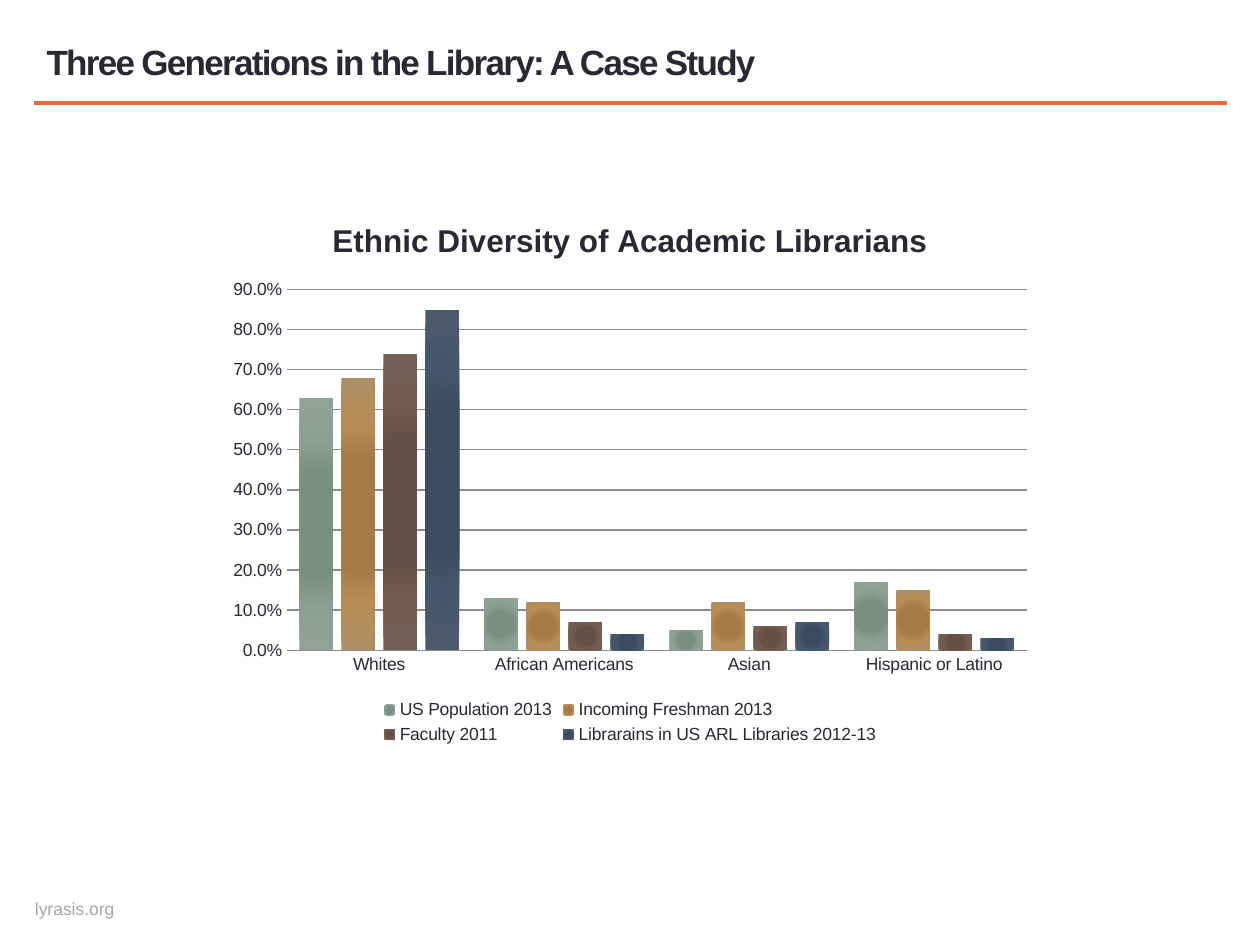
from lxml import etree
from pptx import Presentation
from pptx.chart.data import CategoryChartData
from pptx.dml.color import RGBColor
from pptx.enum.chart import XL_CHART_TYPE, XL_LEGEND_POSITION, XL_TICK_MARK
from pptx.enum.shapes import MSO_CONNECTOR
from pptx.enum.text import MSO_ANCHOR, PP_ALIGN
from pptx.oxml import parse_xml
from pptx.oxml.ns import nsdecls, qn
from pptx.util import Cm, Pt

FONT = "Arial"
INK = "292934"
ORANGE = "E16D2E"
FOOTER_GREY = "A6A6A6"
GRID_GREY = "8C8C8C"

CATEGORIES = ["Whites", "African Americans", "Asian", "Hispanic or Latino"]
SERIES = [
    ("US Population 2013", (0.63, 0.13, 0.05, 0.17), "93A299"),
    ("Incoming Freshman 2013", (0.68, 0.12, 0.12, 0.15), "AD8F67"),
    ("Faculty 2011", (0.74, 0.07, 0.06, 0.04), "726056"),
    ("Librarains in US ARL Libraries 2012-13", (0.85, 0.04, 0.07, 0.03), "4C5A6A"),
]
# Position, luminance and saturation in percent, from the bar's centre outwards
GRADIENT_STOPS = [(0, 85, 135), (40, 85, 135), (65, 97, 135), (100, 100, 100)]


def color(value):
    return RGBColor.from_string(value)


def set_font(font, size, value, bold=False):
    font.name = FONT
    font.size = Pt(size)
    font.bold = bold
    font.color.rgb = color(value)


def add_text(slide, text, box, size, value, bold=False, inset=Cm(0.25), spacing=None):
    shape = slide.shapes.add_textbox(*box)
    frame = shape.text_frame
    frame.word_wrap = True
    frame.vertical_anchor = MSO_ANCHOR.MIDDLE
    frame.margin_left = frame.margin_right = inset
    frame.margin_top = frame.margin_bottom = 0
    paragraph = frame.paragraphs[0]
    run = paragraph.add_run()
    run.text = text
    set_font(paragraph.font, size, value, bold)
    if spacing is not None:
        run.font._element.set("spc", str(spacing))
    return shape


def add_rule(slide, left, right, top, value, width):
    line = slide.shapes.add_connector(MSO_CONNECTOR.STRAIGHT, left, top, right, top)
    line.line.color.rgb = color(value)
    line.line.width = Pt(width)
    etree.SubElement(line._element.spPr, qn("a:effectLst"))


def fill_radial(series, value):
    """Shade each bar from a darker centre to its base colour."""
    series.format.fill.solid()
    stops = "".join(
        f'<a:gs pos="{position * 1000}"><a:srgbClr val="{value}">'
        f'<a:satMod val="{saturation * 1000}"/><a:lumMod val="{luminance * 1000}"/>'
        "</a:srgbClr></a:gs>"
        for position, luminance, saturation in GRADIENT_STOPS
    )
    gradient = parse_xml(
        f'<a:gradFill {nsdecls("a")} rotWithShape="1"><a:gsLst>{stops}</a:gsLst>'
        '<a:path path="circle"><a:fillToRect l="50000" t="50000" r="50000" b="50000"/>'
        "</a:path></a:gradFill>"
    )
    properties = series._element.spPr
    properties.replace(properties.find(qn("a:solidFill")), gradient)


def style_axes(chart):
    category_axis, value_axis = chart.category_axis, chart.value_axis
    for axis in (category_axis, value_axis):
        axis.major_tick_mark = axis.minor_tick_mark = XL_TICK_MARK.NONE
    category_axis.format.line.color.rgb = color(GRID_GREY)
    value_axis.format.line.fill.background()
    value_axis.minimum_scale = 0
    value_axis.maximum_scale = 0.9
    value_axis.major_unit = 0.1
    value_axis.major_gridlines.format.line.color.rgb = color(GRID_GREY)
    value_axis.tick_labels.number_format = "0.0%"
    value_axis.tick_labels.number_format_is_linked = False


def add_column_chart(slide, title, box):
    data = CategoryChartData(number_format="0.0%")
    data.categories = CATEGORIES
    for name, values, _ in SERIES:
        data.add_series(name, values)
    chart = slide.shapes.add_chart(XL_CHART_TYPE.COLUMN_CLUSTERED, *box, data).chart
    set_font(chart.font, 10, INK)

    # Title and legend
    chart.has_title = True
    chart.chart_title.include_in_layout = False
    chart.chart_title.text_frame.text = title
    set_font(chart.chart_title.text_frame.paragraphs[0].font, 18, INK, bold=True)
    chart.has_legend = True
    chart.legend.position = XL_LEGEND_POSITION.BOTTOM
    chart.legend.include_in_layout = False

    # Bars
    plot = chart.plots[0]
    plot.gap_width = 75
    plot.overlap = -25
    plot.vary_by_categories = False
    for series, (_, _, value) in zip(plot.series, SERIES):
        fill_radial(series, value)
    style_axes(chart)


def main():
    presentation = Presentation()
    presentation.slide_width = Cm(25.4)
    presentation.slide_height = Cm(19.05)
    slide = presentation.slides.add_slide(presentation.slide_layouts[6])

    # Heading and rule
    add_text(slide, "Three Generations in the Library: A Case Study",
             (Cm(0.69), Cm(0.61), Cm(18.59), Cm(1.27)), 20, INK, bold=True, spacing=-100)
    add_rule(slide, Cm(0.69), Cm(24.74), Cm(2.08), ORANGE, 2.08)

    # Chart
    add_column_chart(slide, "Ethnic Diversity of Academic Librarians",
                     (Cm(4.37), Cm(3.96), Cm(16.66), Cm(11.15)))

    # Footer
    footer = add_text(slide, "lyrasis.org", (Cm(0.69), Cm(18.11), Cm(1.63), Cm(0.43)),
                      10, FOOTER_GREY, inset=0)
    footer.text_frame.word_wrap = False
    footer.text_frame.paragraphs[0].alignment = PP_ALIGN.CENTER

    presentation.save("out.pptx")


if __name__ == "__main__":
    main()
